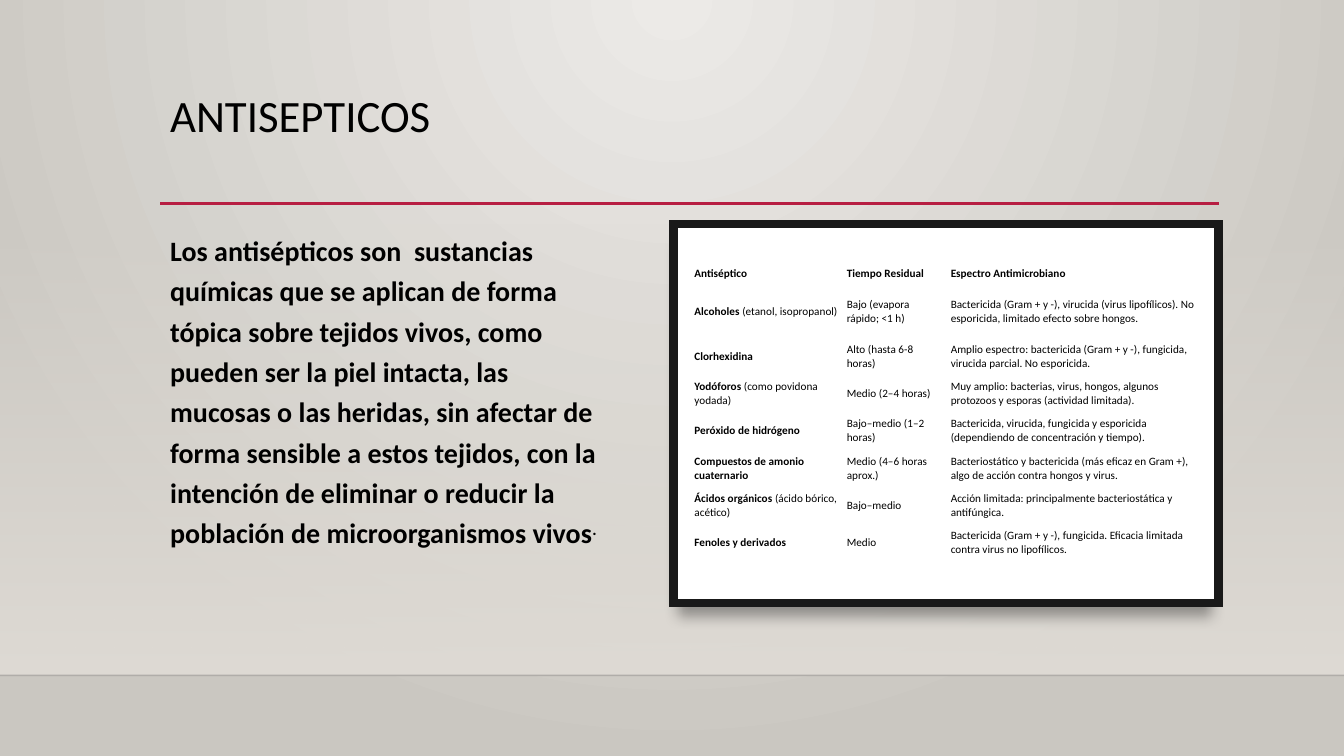
from pptx import Presentation
from pptx.dml.color import RGBColor
from pptx.enum.shapes import MSO_CONNECTOR as CONN, MSO_SHAPE as SHAPE
from pptx.enum.text import MSO_ANCHOR as ANCHOR
from pptx.oxml import parse_xml
from pptx.oxml.ns import nsdecls, qn
from pptx.util import Cm, Pt
from lxml import etree

TITLE = "ANTISEPTICOS"
BODY = ("Los antisépticos son  sustancias químicas que se aplican de forma tópica "
        "sobre tejidos vivos, como pueden ser la piel intacta, las mucosas o las "
        "heridas, sin afectar de forma sensible a estos tejidos, con la intención de "
        "eliminar o reducir la población de microorganismos vivos")
HEADER = ("Antiséptico", "Tiempo Residual", "Espectro Antimicrobiano")
ROWS = [
    ("Alcoholes", " (etanol, isopropanol)", "Bajo (evapora rápido; <1 h)",
     "Bactericida (Gram + y -), virucida (virus lipofílicos). No esporicida, limitado efecto sobre hongos."),
    ("Clorhexidina", "", "Alto (hasta 6-8 horas)",
     "Amplio espectro: bactericida (Gram + y -), fungicida, virucida parcial. No esporicida."),
    ("Yodóforos", " (como povidona yodada)", "Medio (2–4 horas)",
     "Muy amplio: bacterias, virus, hongos, algunos protozoos y esporas (actividad limitada)."),
    ("Peróxido de hidrógeno", "", "Bajo–medio (1–2 horas)",
     "Bactericida, virucida, fungicida y esporicida (dependiendo de concentración y tiempo)."),
    ("Compuestos de amonio cuaternario", "", "Medio (4–6 horas aprox.)",
     "Bacteriostático y bactericida (más eficaz en Gram +), algo de acción contra hongos y virus."),
    ("Ácidos orgánicos", " (ácido bórico, acético)", "Bajo–medio",
     "Acción limitada: principalmente bacteriostática y antifúngica."),
    ("Fenoles y derivados", "", "Medio",
     "Bactericida (Gram + y -), fungicida. Eficacia limitada contra virus no lipofílicos."),
]
COL_WIDTHS = (3.84, 2.62, 6.36)
ROW_HEIGHTS = [0.61, 1.3] + [0.94] * 6
SLIDE_W, SLIDE_H = 33.87, 19.05
LEFT, FLOOR_Y, RULE_Y = 4.04, 17.02, 5.13
PANEL_X, PANEL_Y, PANEL_W, PANEL_H = 16.97, 5.59, 13.74, 9.6


def rgb(color):
    return RGBColor.from_string(color)


def set_alpha(clr, percent):
    etree.SubElement(clr, qn("a:alpha")).set("val", str(percent * 1000))


def set_gradient(fill, start, end, angle=0):
    fill.gradient()
    fill.gradient_angle = angle
    for stop, color in zip(fill.gradient_stops, (start, end)):
        stop.color.rgb = rgb(color)


def add_rect(s, x, y, w, h):
    sp = s.shapes.add_shape(SHAPE.RECTANGLE, Cm(x), Cm(y), Cm(w), Cm(h))
    sp.shadow.inherit = False
    sp.line.fill.background()
    return sp


def add_rule(s, x1, x2, y, color, width):
    ln = s.shapes.add_connector(CONN.STRAIGHT, Cm(x1), Cm(y), Cm(x2), Cm(y))
    ln.line.color.rgb = rgb(color)
    ln.line.width = Pt(width)
    etree.SubElement(ln._element.spPr, qn("a:effectLst"))
    return ln


def set_font(p, size, bold=None):
    p.font.name = "Calibri"
    p.font.size = Pt(size)
    p.font.color.rgb = rgb("000000")
    p.font.bold = bold


def add_text(s, x, y, w, h, text, size, spacing, bold):
    tf = s.shapes.add_textbox(Cm(x), Cm(y), Cm(w), Cm(h)).text_frame
    tf.word_wrap = True
    p = tf.paragraphs[0]
    p.add_run().text = text
    p.line_spacing = spacing
    set_font(p, size, bold)
    return p


def fill_cell(cell, runs):
    cell.fill.background()
    cell.vertical_anchor = ANCHOR.MIDDLE
    cell.margin_left = cell.margin_right = Cm(0.08)
    cell.margin_top = cell.margin_bottom = Cm(0.1)
    p = cell.text_frame.paragraphs[0]
    set_font(p, 8)
    for text, bold in runs:
        if text:
            r = p.add_run()
            r.text = text
            r.font.bold = bold


def add_backdrop(s):
    set_gradient(s.background.fill, "ECEAE7", "CAC7C1")
    grad = next(s._element.iter(qn("a:gradFill")))
    grad.replace(grad.find(qn("a:lin")), parse_xml(
        f'<a:path {nsdecls("a")} path="circle">'
        '<a:fillToRect l="43000" r="43000" b="100000"/></a:path>'))
    wall = add_rect(s, 0, 5.61, SLIDE_W, FLOOR_Y - 5.61)
    set_gradient(wall.fill, "DFDBD5", "DFDBD5", 270)
    set_alpha(next(wall._element.spPr.iter(qn("a:srgbClr"))), 0)
    edge = add_rule(s, 0, SLIDE_W, FLOOR_Y, "000001", 1)
    set_alpha(next(edge._element.spPr.iter(qn("a:srgbClr"))), 20)
    add_rule(s, LEFT, 30.73, RULE_Y, "B71E42", 2.5)


def add_panel(s):
    back = add_rect(s, PANEL_X, PANEL_Y, PANEL_W, PANEL_H)
    set_gradient(back.fill, "000001", "191919")
    effects = back._element.spPr.find(qn("a:effectLst"))
    effects.append(parse_xml(
        f'<a:outerShdw {nsdecls("a")} blurRad="127000" dist="190500" dir="4740000" '
        'sx="98000" sy="98000" algn="tl" rotWithShape="0">'
        '<a:srgbClr val="000000"><a:alpha val="34000"/></a:srgbClr></a:outerShdw>'))
    frame = add_rect(s, PANEL_X, PANEL_Y + 0.05, PANEL_W, PANEL_H - 0.05)
    frame.fill.solid()
    frame.fill.fore_color.rgb = rgb("FFFFFF")
    frame.line.color.rgb = rgb("191919")
    frame.line.width = Pt(6)
    etree.SubElement(frame._element.spPr.find(qn("a:ln")), qn("a:miter")).set("lim", "800000")


def add_antiseptics(s):
    table = s.shapes.add_table(len(ROWS) + 1, len(HEADER), Cm(17.42), Cm(6.6),
                               Cm(sum(COL_WIDTHS)), Cm(sum(ROW_HEIGHTS))).table
    table.first_row = table.horz_banding = False
    for column, width in zip(table.columns, COL_WIDTHS):
        column.width = Cm(width)
    for row, height in zip(table.rows, ROW_HEIGHTS):
        row.height = Cm(height)
    lines = [[[(text, True)] for text in HEADER]]
    for name, detail, residual, spectrum in ROWS:
        lines.append([[(name, True), (detail, False)], [(residual, False)], [(spectrum, False)]])
    for row, line in zip(table.rows, lines):
        for cell, runs in zip(row.cells, line):
            fill_cell(cell, runs)


def main():
    prs = Presentation()
    prs.slide_width, prs.slide_height = Cm(SLIDE_W), Cm(SLIDE_H)
    s = prs.slides.add_slide(prs.slide_layouts[6])
    add_backdrop(s)
    add_text(s, LEFT, 2.24, 26.67, 2.92, TITLE, 32, 0.9, False)
    p = add_text(s, LEFT, 5.59, 11.56, 9.58, BODY, 20, 1.2, True)
    r = p.add_run()
    r.text = "."
    r.font._element.set("baseline", "30000")
    add_panel(s)
    add_antiseptics(s)
    prs.save("out.pptx")


if __name__ == "__main__":
    main()
